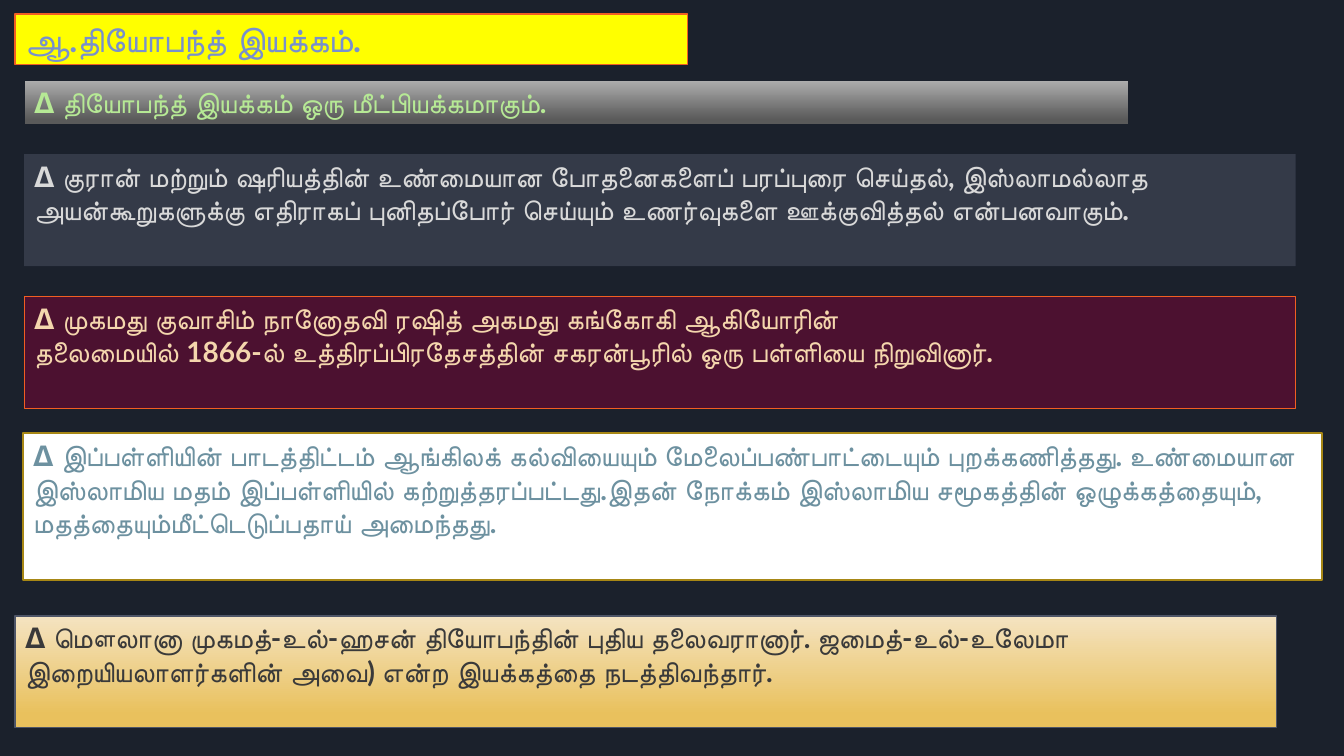
from lxml import etree
from pptx import Presentation
from pptx.dml.color import RGBColor
from pptx.enum.text import MSO_ANCHOR
from pptx.oxml.ns import qn
from pptx.util import Inches, Pt

TOP = MSO_ANCHOR.TOP
FONT = "Lato"
NAVY = RGBColor(0x1B, 0x21, 0x2C)
YELLOW = RGBColor(0xFF, 0xFF, 0x00)
ORANGE = RGBColor(0xF1, 0x5E, 0x22)
PERIWINKLE = RGBColor(0x78, 0x90, 0xCD)
SILVER = RGBColor(0xAD, 0xAD, 0xAD)
GRAY = RGBColor(0x5A, 0x5A, 0x5A)
GREEN = RGBColor(0xB6, 0xE9, 0x95)
SLATE = RGBColor(0x4E, 0x55, 0x67)
PALE_GRAY = RGBColor(0xD9, 0xD9, 0xD9)
MAROON = RGBColor(0x4C, 0x11, 0x30)
PEACH = RGBColor(0xF4, 0xD6, 0xAD)
WHITE = RGBColor(0xFF, 0xFF, 0xFF)
OLIVE = RGBColor(0xA7, 0x87, 0x15)
TEAL = RGBColor(0x6D, 0x91, 0xA0)
CREAM = RGBColor(0xF4, 0xE3, 0xC1)
GOLD = RGBColor(0xE9, 0xC1, 0x5D)
CHARCOAL = RGBColor(0x3A, 0x3A, 0x3A)

GRADIENT_END = 0.88
SLATE_OPACITY = 49

STATEMENTS = [
    dict(text="ஆ.தியோபந்த் இயக்கம்.",
         box=(0.15, 0.14, 6.67, 0.5), size=24, color=PERIWINKLE,
         fill=[YELLOW], border=(ORANGE, 1)),
    dict(text="∆ தியோபந்த் இயக்கம் ஒரு மீட்பியக்கமாகும்.",
         box=(0.24, 0.8, 10.95, 0.44), size=20, color=GREEN,
         fill=[SILVER, GRAY], border=(NAVY, 1)),
    dict(text="∆ குரான் மற்றும் ஷரியத்தின் உண்மையான போதனைகளைப் பரப்புரை செய்தல், "
              "இஸ்லாமல்லாத அயன்கூறுகளுக்கு எதிராகப் புனிதப்போர் செய்யும் "
              "உணர்வுகளை ஊக்குவித்தல் என்பனவாகும்.",
         box=(0.24, 1.53, 12.61, 1.11), size=20, color=PALE_GRAY,
         fill=[SLATE], opacity=SLATE_OPACITY),
    dict(text="∆ முகமது குவாசிம் நானோதவி ரஷித் அகமது கங்கோகி ஆகியோரின்\n"
              "தலைமையில் 1866-ல் உத்திரப்பிரதேசத்தின் சகரன்பூரில் ஒரு பள்ளியை நிறுவினார்.",
         box=(0.24, 2.94, 12.61, 1.11), size=20, color=PEACH,
         fill=[MAROON], border=(ORANGE, 1)),
    dict(text="∆ இப்பள்ளியின் பாடத்திட்டம் ஆங்கிலக் கல்வியையும் மேலைப்பண்பாட்டையும் "
              "புறக்கணித்தது. உண்மையான இஸ்லாமிய மதம் இப்பள்ளியில் "
              "கற்றுத்தரப்பட்டது.இதன் நோக்கம் இஸ்லாமிய சமூகத்தின் ஒழுக்கத்தையும், "
              "மதத்தையும்மீட்டெடுப்பதாய் அமைந்தது.",
         box=(0.23, 4.3, 12.88, 1.45), size=20, color=TEAL,
         fill=[WHITE], border=(OLIVE, 1.5)),
    dict(text="∆ மௌலானா முகமத்-உல்-ஹசன் தியோபந்தின் புதிய தலைவரானார். "
              "ஜமைத்-உல்-உலேமா இறையியலாளர்களின் அவை) என்ற இயக்கத்தை நடத்திவந்தார்.",
         box=(0.15, 6.11, 12.51, 1.11), size=20, color=CHARCOAL,
         fill=[CREAM, GOLD], border=(SLATE, 1)),
]


def paint(panel, colors, opacity=None):
    if len(colors) == 1:
        panel.fill.solid()
        panel.fill.fore_color.rgb = colors[0]
    else:
        panel.fill.gradient()
        panel.fill.gradient_angle = 270
        for stop, color, position in zip(panel.fill.gradient_stops, colors, (0, GRADIENT_END)):
            stop.color.rgb = color
            stop.position = position
    if opacity is not None:
        tint = panel.element.spPr.find(".//" + qn("a:srgbClr"))
        etree.SubElement(tint, qn("a:alpha"), val=str(opacity * 1000))


def add_statement(slide, text, box, size, color, fill, border=None, opacity=None):
    panel = slide.shapes.add_textbox(*map(Inches, box))
    paint(panel, fill, opacity)
    if border:
        panel.line.color.rgb, panel.line.width = border[0], Pt(border[1])
    frame = panel.text_frame
    frame.word_wrap = True
    frame.vertical_anchor = TOP
    frame.text = text
    for paragraph in frame.paragraphs:
        for run in paragraph.runs:
            run.font.name = FONT
            run.font.size = Pt(size)
            run.font.bold = True
            run.font.color.rgb = color


def main():
    deck = Presentation()
    deck.slide_width, deck.slide_height = Inches(13.33), Inches(7.5)
    slide = deck.slides.add_slide(deck.slide_layouts[6])
    slide.background.fill.solid()
    slide.background.fill.fore_color.rgb = NAVY
    for statement in STATEMENTS:
        add_statement(slide, **statement)
    deck.save("out.pptx")


if __name__ == "__main__":
    main()
